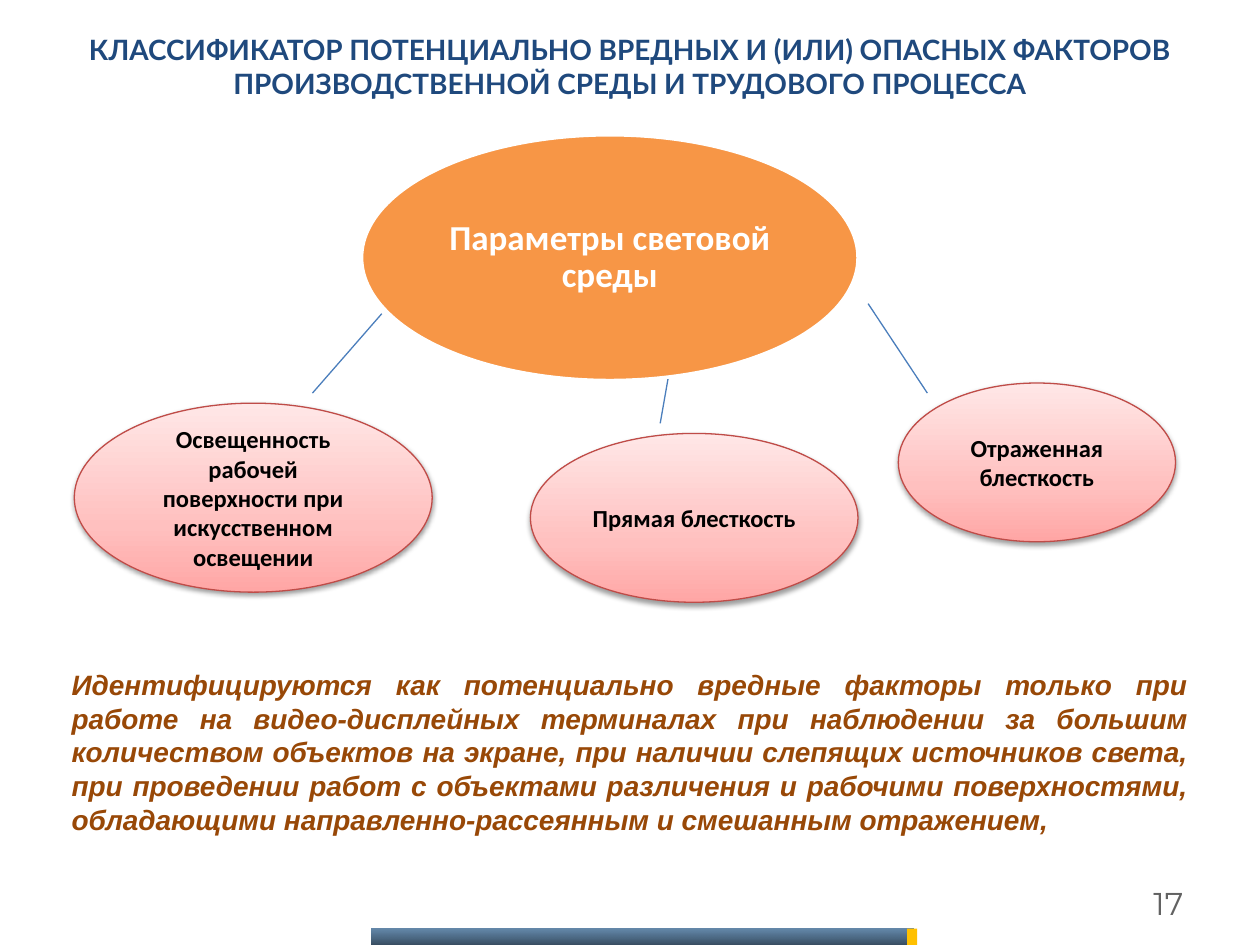
from dataclasses import dataclass

from lxml.etree import SubElement
from pptx import Presentation
from pptx.dml.color import RGBColor
from pptx.enum.shapes import MSO_CONNECTOR, MSO_SHAPE
from pptx.enum.text import MSO_ANCHOR, PP_ALIGN
from pptx.oxml import parse_xml
from pptx.oxml.ns import nsdecls, qn
from pptx.util import Inches, Pt

COLORS = {
    "title": "1F497D", "number": "626262", "note": "984807",
    "main": "F79646", "white": "FFFFFF", "black": "000000",
    "factor_line": "BF4C48", "link": "4B7EBC", "accent": "FFC000",
}
# Gradient stops: position in percent, colour, opacity in percent
FACTOR_STOPS = [(0, "FFA6A5", 100), (35, "FFC0BF", 100), (100, "FFE7E7", 100)]
BAR_STOPS = [(0, "003C73", 60), (100, "001C35", 80)]


@dataclass
class Box:
    left: float
    top: float
    width: float
    height: float

    def emu(self):
        return [Inches(v) for v in (self.left, self.top, self.width, self.height)]


@dataclass
class Factor:
    text: str
    box: Box
    link_from: tuple[float, float]
    link_to: tuple[float, float]


FACTORS = [
    Factor("Освещенность рабочей поверхности при искусственном освещении",
           Box(0.59, 3.2, 2.84, 1.5), (3.03, 2.49), (2.48, 3.12)),
    Factor("Прямая блесткость",
           Box(4.21, 3.44, 2.6, 1.34), (5.31, 2.96), (5.24, 3.36)),
    Factor("Отраженная блесткость",
           Box(7.13, 3.04, 2.2, 1.26), (6.89, 2.41), (7.36, 3.12)),
]


def rgb(name: str) -> RGBColor:
    return RGBColor.from_string(COLORS[name])


def write(sp, text: str, font: str, size: float, color: str, align=PP_ALIGN.CENTER,
          anchor=MSO_ANCHOR.MIDDLE, bold=True, italic=False):
    tf = sp.text_frame
    tf.word_wrap = True
    tf.vertical_anchor = anchor
    p = tf.paragraphs[0]
    p.text = text
    p.alignment = align
    p.font.name, p.font.size = font, Pt(size)
    p.font.bold, p.font.italic = bold, italic
    p.font.color.rgb = rgb(color)
    return tf


def add_text(s, box: Box, text: str, *style, **options):
    return write(s.shapes.add_textbox(*box.emu()), text, *style, **options)


def add_shape(s, kind, box: Box, fill: str | None = None):
    sp = s.shapes.add_shape(kind, *box.emu())
    sp.shadow.inherit = False
    sp.line.fill.background()
    if fill:
        sp.fill.solid()
        sp.fill.fore_color.rgb = rgb(fill)
    return sp


def set_outline(sp, color: str, width: float) -> None:
    sp.line.color.rgb = rgb(color)
    sp.line.width = Pt(width)


def set_gradient(sp, stops: list, angle: int) -> None:
    """Fill with a linear gradient; the angle runs clockwise."""
    gs = "".join(
        f'<a:gs pos="{pos * 1000}"><a:srgbClr val="{color}">'
        f'<a:alpha val="{alpha * 1000}"/></a:srgbClr></a:gs>'
        for pos, color, alpha in stops)
    grad = parse_xml(
        f'<a:gradFill {nsdecls("a")} rotWithShape="1"><a:gsLst>{gs}</a:gsLst>'
        f'<a:lin ang="{angle * 60000}" scaled="0"/></a:gradFill>')
    sp._element.spPr.find(qn("a:prstGeom")).addnext(grad)


def set_shadow(sp) -> None:
    effects = sp._element.spPr.find(qn("a:effectLst"))
    effects.append(parse_xml(
        f'<a:outerShdw {nsdecls("a")} blurRad="{Pt(3.1)}" dist="{Pt(1.6)}" '
        f'dir="5400000" rotWithShape="0"><a:srgbClr val="{COLORS["black"]}">'
        '<a:alpha val="38000"/></a:srgbClr></a:outerShdw>'))


def add_factor(s, factor: Factor) -> None:
    """Draw a factor's ellipse and its link to the main ellipse."""
    sp = add_shape(s, MSO_SHAPE.OVAL, factor.box)
    set_gradient(sp, FACTOR_STOPS, 270)
    set_outline(sp, "factor_line", 0.75)
    set_shadow(sp)
    write(sp, factor.text, "Calibri", 14, "black")

    ends = [Inches(v) for v in factor.link_from + factor.link_to]
    link = s.shapes.add_connector(MSO_CONNECTOR.STRAIGHT, *ends)
    set_outline(link, "link", 0.75)
    SubElement(link._element.spPr, qn("a:effectLst"))


def add_main(s) -> None:
    sp = add_shape(s, MSO_SHAPE.OVAL, Box(2.87, 1.07, 3.94, 1.95), "main")
    set_outline(sp, "white", 2)
    tf = write(sp, "Параметры световой среды", "Calibri", 20, "white")
    tf.margin_left = tf.margin_right = tf.margin_top = tf.margin_bottom = Inches(0.03)
    tf.paragraphs[0].line_spacing = 0.9


def main() -> None:
    prs = Presentation()
    prs.slide_width, prs.slide_height = Inches(10), Inches(7.5)
    s = prs.slides.add_slide(prs.slide_layouts[5])

    title = s.shapes.title
    title.left, title.top, title.width, title.height = Box(0.51, 0.21, 8.98, 0.63).emu()
    write(title, "КЛАССИФИКАТОР ПОТЕНЦИАЛЬНО ВРЕДНЫХ И (ИЛИ) ОПАСНЫХ ФАКТОРОВ "
          "ПРОИЗВОДСТВЕННОЙ СРЕДЫ И ТРУДОВОГО ПРОЦЕССА", "Lato", 16, "title")

    add_text(s, Box(7.16, 6.97, 2.33, 0.4), "17", "Montserrat", 18, "number",
             align=PP_ALIGN.RIGHT, bold=False)
    bar = add_shape(s, MSO_SHAPE.RECTANGLE, Box(2.95, 7.37, 4.3, 0.13))
    set_gradient(bar, BAR_STOPS, 90)
    add_shape(s, MSO_SHAPE.RECTANGLE, Box(7.2, 7.37, 0.08, 0.13), "accent")

    for factor in FACTORS:
        add_factor(s, factor)
    add_text(s, Box(0.47, 5.25, 9.06, 1.45),
             "Идентифицируются как потенциально вредные факторы только при работе "
             "на видео-дисплейных терминалах при наблюдении за большим количеством "
             "объектов на экране, при наличии слепящих источников света, при "
             "проведении работ с объектами различения и рабочими поверхностями, "
             "обладающими направленно-рассеянным и смешанным отражением,",
             "Arial", 16, "note", align=PP_ALIGN.JUSTIFY, anchor=MSO_ANCHOR.TOP,
             italic=True)
    add_main(s)

    prs.save("out.pptx")


if __name__ == "__main__":
    main()
